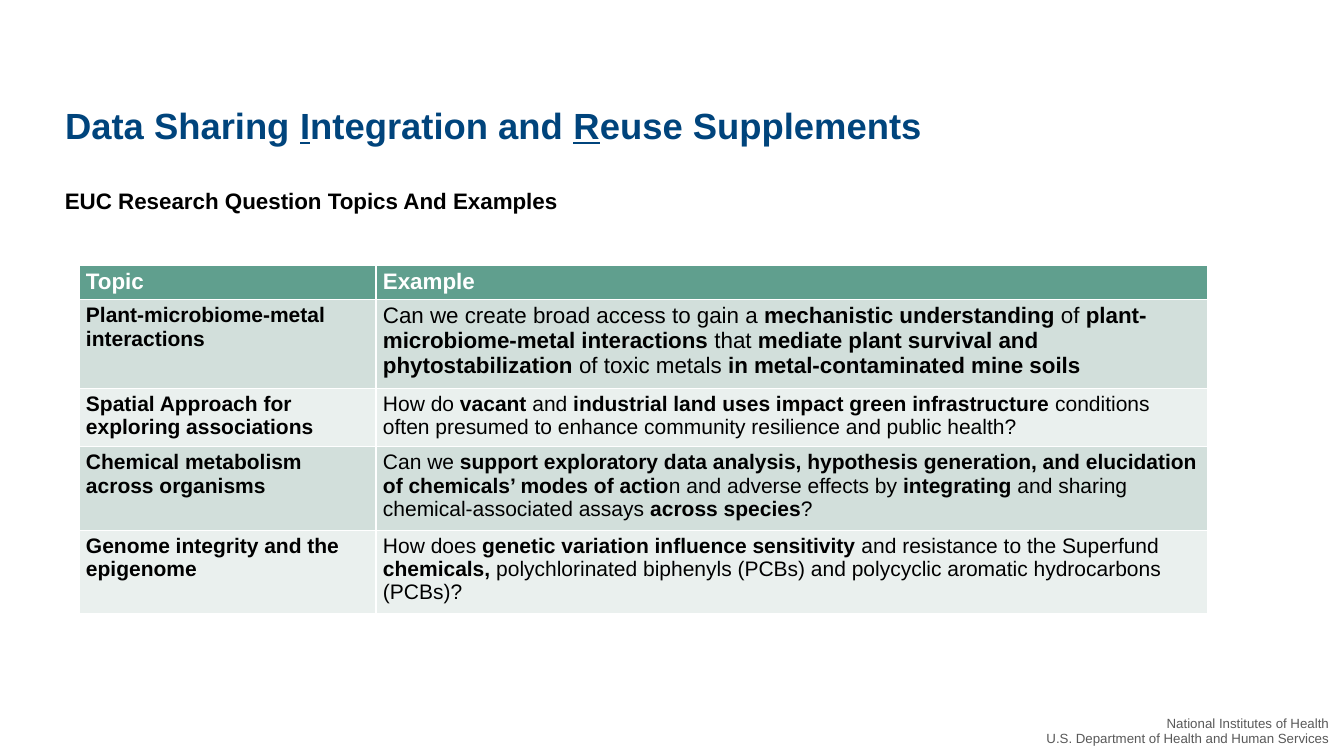
from dataclasses import dataclass
from pptx import Presentation
from pptx.dml.color import RGBColor
from pptx.enum.text import MSO_ANCHOR, MSO_AUTO_SIZE, PP_ALIGN
from pptx.util import Emu, Pt

# Content: * switches bold in table text, _ switches underline in the title
TITLE = "Data Sharing _I_ntegration and _R_euse Supplements"
SUBTITLE = "EUC Research Question Topics And Examples"
FOOTER = ["National Institutes of Health",
          "U.S. Department of Health and Human Services"]
HEADER = ("Topic", "Example")
TOPICS = [
    ("Plant-microbiome-metal interactions",
     "Can we create broad access to gain a *mechanistic understanding *of "
     "*plant-microbiome-metal interactions* that *mediate plant survival and "
     "phytostabilization* of toxic metals *in metal-contaminated mine soils*"),
    ("Spatial Approach for exploring associations",
     "How do *vacant* and *industrial land uses impact green infrastructure* "
     "conditions often presumed to enhance community resilience and public health?"),
    ("Chemical metabolism across organisms",
     "Can we *support exploratory data analysis, hypothesis generation, and "
     "elucidation of chemicals’ modes of actio*n and adverse effects by "
     "*integrating* and sharing chemical-associated assays *across species*?"),
    ("Genome integrity and the epigenome",
     "How does *genetic variation influence sensitivity *and resistance to the "
     "Superfund *chemicals,* polychlorinated biphenyls (PCBs) and polycyclic "
     "aromatic hydrocarbons (PCBs)?"),
]

# Layout in px
PX = 914400 / 100.8
SLIDE = (1344, 756)
TITLE_BOX = (55, 95, 968, 80)
SUBTITLE_BOX = (55, 182, 519, 37)
FOOTER_BOX = (1033, 712, 311, 44)
TABLE_BOX = (79, 265, 1129, 284)
COLUMNS = (297, 832)
ROWS = (30, 57, 57, 57, 83)


@dataclass(frozen=True)
class Theme:
    font: str = "Arial"
    title: str = "00447C"
    text: str = "000000"
    white: str = "FFFFFF"
    muted: str = "595959"
    header: str = "609F8E"
    bands: tuple = ("D2DFDB", "EAF0EE")
    title_size: float = 26
    large: float = 16
    body: float = 15
    small: float = 9.5


THEME = Theme()


def px(n):
    return Emu(round(n * PX))


def box(values):
    return [px(v) for v in values]


def style(p, size, color, bold=None):
    p.font.name = THEME.font
    p.font.size = Pt(size)
    p.font.color.rgb = RGBColor.from_string(color)
    p.font.bold = bold


def add_runs(p, text, mark, attribute):
    """Add runs, switching a font attribute on and off at each mark."""
    for i, part in enumerate(text.split(mark)):
        if part:
            r = p.add_run()
            r.text = part
            setattr(r.font, attribute, i % 2 == 1)


def fill_cell(cell, color):
    cell.fill.solid()
    cell.fill.fore_color.rgb = RGBColor.from_string(color)
    cell.margin_left = cell.margin_right = px(7)
    cell.margin_top = cell.margin_bottom = px(4)
    return cell.text_frame.paragraphs[0]


def add_title(s):
    sp = s.shapes.title
    sp.left, sp.top, sp.width, sp.height = box(TITLE_BOX)
    tf = sp.text_frame
    tf.vertical_anchor = MSO_ANCHOR.TOP
    tf.auto_size = MSO_AUTO_SIZE.NONE
    tf.margin_top = px(8)
    p = tf.paragraphs[0]
    p.alignment = PP_ALIGN.LEFT
    style(p, THEME.title_size, THEME.title, True)
    add_runs(p, TITLE, "_", "underline")


def add_text(s, place, lines, size, color, bold=None):
    tf = s.shapes.add_textbox(*box(place)).text_frame
    tf.word_wrap = False
    tf.text = "\n".join(lines)
    for p in tf.paragraphs:
        style(p, size, color, bold)
    return tf


def add_topics(s):
    table = s.shapes.add_table(len(ROWS), len(COLUMNS), *box(TABLE_BOX)).table
    for column, width in zip(table.columns, COLUMNS):
        column.width = px(width)
    for row, height in zip(table.rows, ROWS):
        row.height = px(height)
    for c, label in enumerate(HEADER):
        p = fill_cell(table.cell(0, c), THEME.header)
        p.text = label
        style(p, THEME.large, THEME.white, True)
    for i, (topic, example) in enumerate(TOPICS):
        band = THEME.bands[i % 2]
        p = fill_cell(table.cell(i + 1, 0), band)
        p.text = topic
        style(p, THEME.body, THEME.text, True)
        p = fill_cell(table.cell(i + 1, 1), band)
        style(p, THEME.body if i else THEME.large, THEME.text)
        add_runs(p, example, "*", "bold")


def main():
    prs = Presentation()
    prs.slide_width, prs.slide_height = box(SLIDE)
    s = prs.slides.add_slide(prs.slide_layouts[5])

    # Heading
    add_title(s)
    add_text(s, SUBTITLE_BOX, [SUBTITLE], THEME.large, THEME.text, True)

    # Topics table
    add_topics(s)

    # Footer
    tf = add_text(s, FOOTER_BOX, FOOTER, THEME.small, THEME.muted)
    tf.vertical_anchor = MSO_ANCHOR.BOTTOM
    tf.margin_right, tf.margin_bottom = px(15), px(10)
    for p in tf.paragraphs:
        p.alignment = PP_ALIGN.RIGHT
        p.line_spacing = 0.9

    prs.save("out.pptx")


if __name__ == "__main__":
    main()
